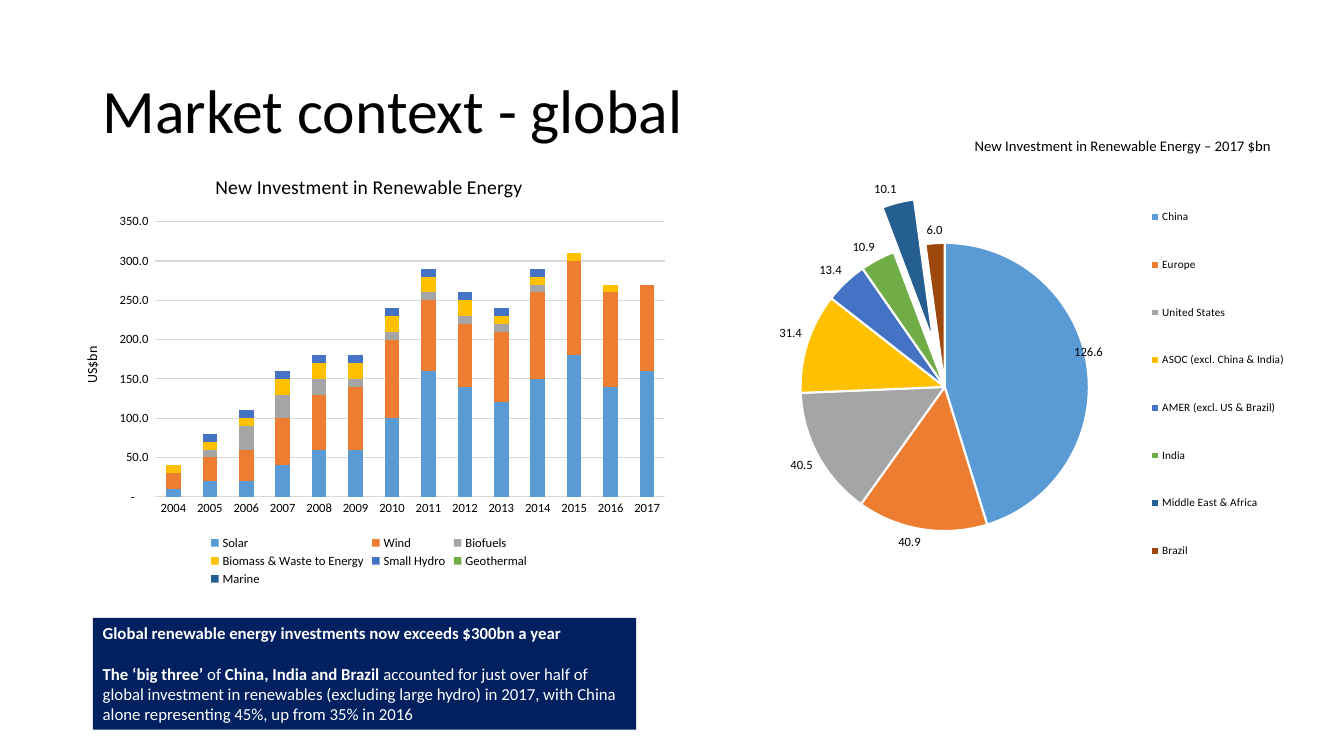
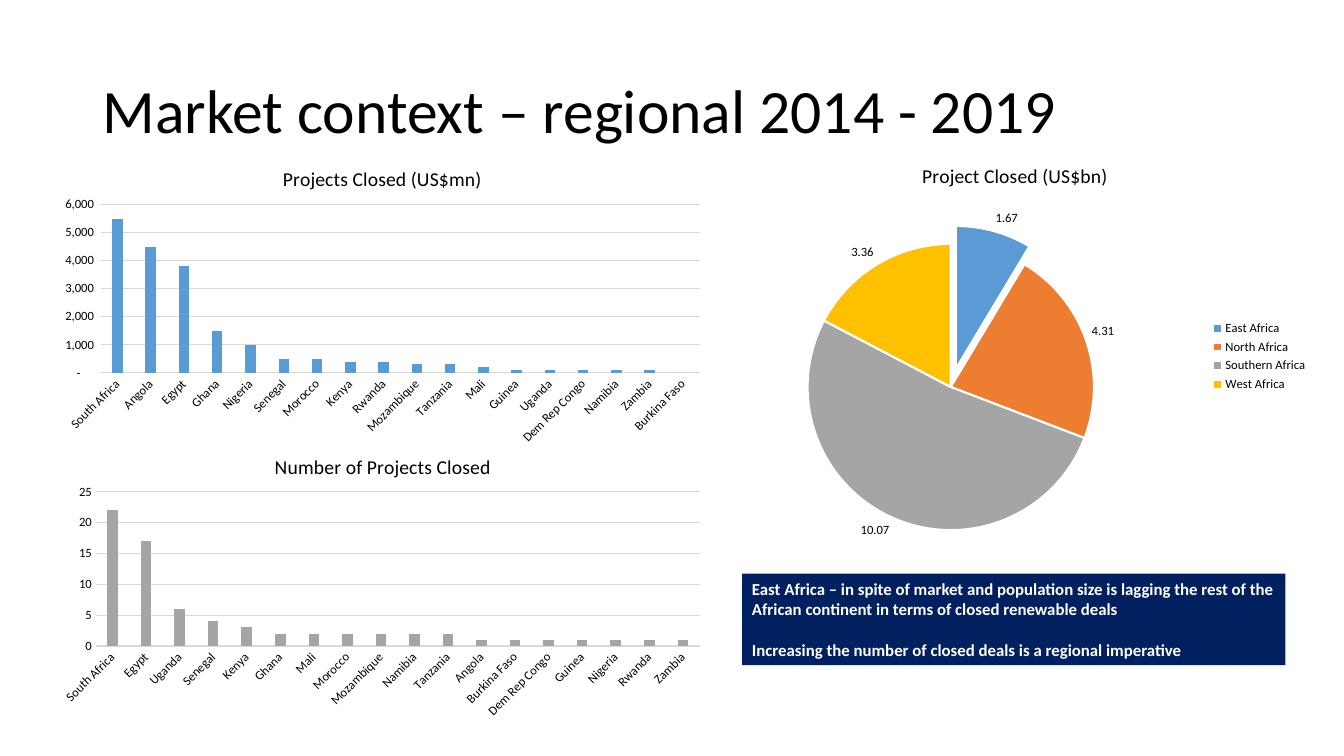
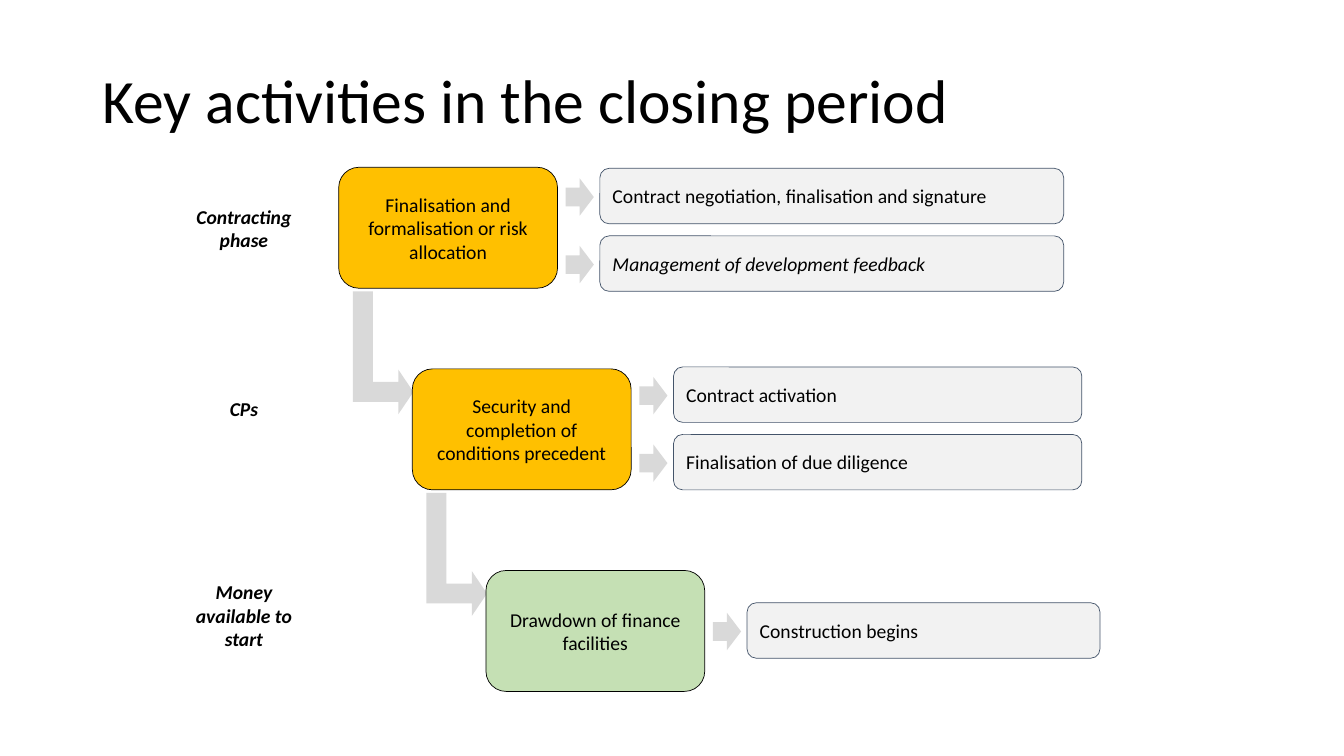
"""Build three slides on renewable energy markets and the closing period."""
from lxml import etree
from pptx import Presentation
from pptx.chart.data import CategoryChartData
from pptx.dml.color import RGBColor
from pptx.enum.chart import XL_CHART_TYPE, XL_LABEL_POSITION, XL_LEGEND_POSITION, XL_TICK_MARK
from pptx.enum.shapes import MSO_SHAPE
from pptx.enum.text import MSO_ANCHOR, PP_ALIGN
from pptx.oxml.ns import qn
from pptx.util import Inches, Pt

STACKED, CLUSTERED, PIE = XL_CHART_TYPE.COLUMN_STACKED, XL_CHART_TYPE.COLUMN_CLUSTERED, XL_CHART_TYPE.PIE
OUTSIDE = XL_LABEL_POSITION.OUTSIDE_END
BOTTOM, RIGHT = XL_LEGEND_POSITION.BOTTOM, XL_LEGEND_POSITION.RIGHT
NO_TICK = XL_TICK_MARK.NONE
RECT, ROUND = MSO_SHAPE.RECTANGLE, MSO_SHAPE.ROUNDED_RECTANGLE
ARROW, BENT = MSO_SHAPE.RIGHT_ARROW, MSO_SHAPE.BENT_UP_ARROW
TOP, MIDDLE = MSO_ANCHOR.TOP, MSO_ANCHOR.MIDDLE
LEFT, CENTER = PP_ALIGN.LEFT, PP_ALIGN.CENTER


class Theme:
    font = "Calibri"
    black, white, navy, slate = "000000", "FFFFFF", "002060", "44546A"
    amber, green, pale, arrow = "FFC000", "C5E0B4", "F2F2F2", "D9D9D9"
    series = ["5B9BD5", "ED7D31", "A5A5A5", "FFC000", "4472C4", "70AD47", "255E91", "9E480E"]
    title, body, callout, chart_title, pie_title = 44, 14, 12, 14, 10.5
    chart, label, legend = 10, 9, 8


YEARS = [str(year) for year in range(2004, 2018)]
INVESTMENT = {
    "Solar": [10, 20, 20, 40, 60, 60, 100, 160, 140, 120, 150, 180, 140, 160],
    "Wind": [20, 30, 40, 60, 70, 80, 100, 90, 80, 90, 110, 120, 120, 110],
    "Biofuels": [0, 10, 30, 30, 20, 10, 10, 10, 10, 10, 10, 0, 0, 0],
    "Biomass & Waste to Energy": [10, 10, 10, 20, 20, 20, 20, 20, 20, 10, 10, 10, 10, 0],
    "Small Hydro": [0, 10, 10, 10, 10, 10, 10, 10, 10, 10, 10, 0, 0, 0],
    "Geothermal": [0] * 14,
    "Marine": [0] * 14,
}
REGIONS_2017 = {
    "China": 126.6, "Europe": 40.9, "United States": 40.5, "ASOC (excl. China & India)": 31.4,
    "AMER (excl. US & Brazil)": 13.4, "India": 10.9, "Middle East & Africa": 10.1, "Brazil": 6,
}
CLOSED_VALUE = {
    "South Africa": 5500, "Angola": 4500, "Egypt": 3800, "Ghana": 1500, "Nigeria": 1000,
    "Senegal": 500, "Morocco": 500, "Kenya": 400, "Rwanda": 400, "Mozambique": 300,
    "Tanzania": 300, "Mali": 200, "Guinea": 100, "Uganda": 100, "Dem Rep Congo": 100,
    "Namibia": 100, "Zambia": 100, "Burkina Faso": 0,
}
CLOSED_COUNT = {
    "South Africa": 22, "Egypt": 17, "Uganda": 6, "Senegal": 4, "Kenya": 3, "Ghana": 2,
    "Mali": 2, "Morocco": 2, "Mozambique": 2, "Namibia": 2, "Tanzania": 2, "Angola": 1,
    "Burkina Faso": 1, "Dem Rep Congo": 1, "Guinea": 1, "Nigeria": 1, "Rwanda": 1, "Zambia": 1,
}
CLOSED_REGION = {"East Africa": 1.67, "North Africa": 4.31, "Southern Africa": 10.07, "West Africa": 3.36}

GLOBAL_NOTE = [
    [("Global renewable energy investments now exceeds $300bn a year", True)],
    [("The ‘big three’", True), (" of ", False), ("China, India and Brazil", True),
     (" accounted for just over half of global investment in renewables (excluding large hydro) "
      "in 2017, with China alone representing 45%, up from 35% in 2016", False)],
]
REGIONAL_NOTE = [
    [("East Africa – in spite of market and population size is lagging the rest of the African "
      "continent in terms of closed renewable deals", True)],
    [("Increasing the number of closed deals is a regional imperative", True)],
]
STAGES = [
    {"phase": "Contracting phase", "phase_top": 1.71, "fill": Theme.amber, "task_top": 1.67,
     "text": "Finalisation and formalisation or risk allocation",
     "tasks": [("Contract negotiation, finalisation and signature", False),
               ("Management of development feedback", True)]},
    {"phase": "CPs", "phase_top": 3.5, "fill": Theme.amber, "task_top": 3.64,
     "text": "Security and completion of conditions precedent",
     "tasks": [("Contract activation", False), ("Finalisation of due diligence", False)]},
    {"phase": "Money available to start", "phase_top": 5.55, "fill": Theme.green, "task_top": 5.98,
     "text": "Drawdown of finance facilities",
     "tasks": [("Construction begins", False)]},
]
ONE_DECIMAL = r'_ * #,##0.0_ ;_ * \-#,##0.0_ ;_ * "-"??_ '
THOUSANDS = r'_ * #,##0_ ;_ * \-#,##0_ ;_ * "-"??_ ;_ @_ '


def rgb(value):
    return RGBColor.from_string(value)


def style_font(font, size, color=Theme.black, bold=False, italic=False):
    font.name, font.size, font.bold, font.italic = Theme.font, Pt(size), bold, italic
    font.color.rgb = rgb(color)


def write(tf, paragraphs, size=Theme.body, color=Theme.black, align=LEFT, anchor=MIDDLE,
          italic=False, gap=0, spacing=1.0):
    """Fill a text frame with paragraphs, each a list of (text, bold) runs."""
    tf.word_wrap, tf.vertical_anchor = True, anchor
    for i, runs in enumerate(paragraphs):
        p = tf.add_paragraph() if i else tf.paragraphs[0]
        p.alignment, p.line_spacing = align, spacing
        if i:
            p.space_before = Pt(gap)
        for text, bold in runs:
            r = p.add_run()
            r.text = text
            style_font(r.font, size, color, bold, italic)


def add_block(s, kind, box, fill=None, line=None):
    sp = s.shapes.add_shape(kind, *map(Inches, box))
    sp.shadow.inherit = False
    if fill:
        sp.fill.solid()
        sp.fill.fore_color.rgb = rgb(fill)
    else:
        sp.fill.background()
    if line:
        sp.line.color.rgb, sp.line.width = rgb(line), Pt(0.5)
    else:
        sp.line.fill.background()
    return sp


def add_slide(prs, title, top=0.4):
    s = prs.slides.add_slide(prs.slide_layouts[6])
    tf = s.shapes.add_textbox(*map(Inches, (0.92, top, 11.5, 1.45))).text_frame
    write(tf, [[(title, False)]], size=Theme.title, spacing=0.9)
    return s


def add_callout(s, paragraphs, box):
    sp = add_block(s, RECT, box, Theme.navy)
    write(sp.text_frame, paragraphs, size=Theme.callout, color=Theme.white, anchor=TOP, gap=14.6)


def set_layout(element, index, **values):
    """Give a chart part a manual layout, as fractions of the chart."""
    old = element.find(qn("c:layout"))
    if old is not None:
        element.remove(old)
    layout = etree.Element(qn("c:layout"))
    manual = etree.SubElement(layout, qn("c:manualLayout"))
    for name, value in values.items():
        etree.SubElement(manual, qn("c:" + name)).set("val", str(value))
    element.insert(index, layout)


def place(element, index, frame, box, **modes):
    """Put a chart part at a box given in slide inches."""
    left, top, width, height = frame
    values = [(box[0] - left) / width, (box[1] - top) / height]
    values += [size / full for size, full in zip(box[2:], (width, height))]
    fractions = {name: round(value, 4) for name, value in zip("xywh", values)}
    set_layout(element, index, **modes, xMode="edge", yMode="edge", **fractions)


def add_chart(s, kind, frame, cats, series, title, title_at, plot, number_format="General",
              title_size=Theme.chart_title, legend=None, legend_size=Theme.label, legend_box=None):
    data = CategoryChartData(number_format=number_format)
    data.categories = cats
    for name, values in series.items():
        data.add_series(name, values)
    chart = s.shapes.add_chart(kind, *map(Inches, frame), data).chart
    style_font(chart.font, Theme.chart)
    chart.has_title = True
    tf = chart.chart_title.text_frame
    write(tf, [[(title, False)]], size=title_size, align=CENTER)
    chart.chart_title.include_in_layout = False
    place(chart.chart_title._element, 1, frame, title_at)
    place(chart._chartSpace.chart.plotArea, 0, frame, plot, layoutTarget="inner")
    chart.has_legend = legend is not None
    if chart.has_legend:
        chart.legend.position, chart.legend.include_in_layout = legend, False
        style_font(chart.legend.font, legend_size)
        if legend_box:
            place(chart.legend._element, 1, frame, legend_box)
    return chart


def format_columns(chart, colors, top, step, number_format, gap, overlap, auto_rotate=False):
    plot = chart.plots[0]
    plot.vary_by_categories, plot.gap_width, plot.overlap = False, gap, overlap
    for series, color in zip(plot.series, colors):
        series.format.fill.solid()
        series.format.fill.fore_color.rgb = rgb(color)
    cat, val = chart.category_axis, chart.value_axis
    for axis in (cat, val):
        axis.major_tick_mark = axis.minor_tick_mark = NO_TICK
        style_font(axis.tick_labels.font, Theme.label)
    for line in (cat.format.line, val.major_gridlines.format.line):
        line.color.rgb, line.width = rgb(Theme.arrow), Pt(0.75)
    val.format.line.fill.background()
    val.minimum_scale, val.maximum_scale, val.major_unit = 0, top, step
    val.tick_labels.number_format = number_format
    val.tick_labels.number_format_is_linked = False
    if auto_rotate:
        cat._element.find(qn("c:txPr")).find(qn("a:bodyPr")).set("rot", "-60000000")


def format_pie(chart, number_format, exploded, explosion):
    plot = chart.plots[0]
    plot.vary_by_categories = True
    series = plot.series[0]
    for i in range(len(plot.categories)):
        fmt = series.points[i].format
        fmt.fill.solid()
        fmt.fill.fore_color.rgb = rgb(Theme.series[i])
        fmt.line.color.rgb, fmt.line.width = rgb(Theme.white), Pt(1.5)
    slice_xml = series._element.findall(qn("c:dPt"))[exploded]
    offset = etree.Element(qn("c:explosion"))
    offset.set("val", str(explosion))
    slice_xml.find(qn("c:spPr")).addprevious(offset)
    labels = series.data_labels
    labels.show_value, labels.position = True, OUTSIDE
    labels.number_format, labels.number_format_is_linked = number_format, False
    style_font(labels.font, Theme.label)
    labels_xml = series._element.find(qn("c:dLbls"))
    leader = labels_xml.find(qn("c:showLeaderLines"))
    if leader is None:
        leader = etree.SubElement(labels_xml, qn("c:showLeaderLines"))
    leader.set("val", "0")
    return series


def build_global(prs):
    s = add_slide(prs, "Market context - global")
    chart = add_chart(s, STACKED, (0.62, 1.55, 6.1, 4.32), YEARS, INVESTMENT,
                      "New Investment in Renewable Energy", (2.1, 1.68), (1.54, 2.2, 5.06, 2.73),
                      legend=BOTTOM, legend_box=(2.05, 5.28, 3.22, 0.57))
    format_columns(chart, Theme.series, 350, 50, ONE_DECIMAL, 150, 100)
    write(chart.value_axis.axis_title.text_frame, [[("US$bn", False)]], size=Theme.chart)

    chart = add_chart(s, PIE, (7.01, 1.21, 6.26, 4.66), REGIONS_2017,
                      {"Investment": REGIONS_2017.values()},
                      "New Investment in Renewable Energy – 2017 $bn", (9.64, 1.32),
                      (7.94, 2.41, 2.86, 2.86), "0.0", Theme.pie_title,
                      RIGHT, Theme.legend, (11.18, 1.75, 1.8, 4.13))
    china = format_pie(chart, "0.0", 6, 32).points[0].data_label
    china.position = OUTSIDE
    style_font(china.font, Theme.label)
    label_xml = chart._chartSpace.find(".//" + qn("c:dLbl"))
    set_layout(label_xml, 1, x=-0.03, y=-0.01)
    add_callout(s, GLOBAL_NOTE, (0.92, 6.13, 5.39, 1.11))


def build_regional(prs):
    s = add_slide(prs, "Market context – regional 2014 - 2019")
    bars = [
        ("Projects Closed (US$mn)", CLOSED_VALUE, (0.49, 1.44, 6.58, 3.03), (2.77, 1.6),
         (1.0, 2.03, 5.94, 1.67), Theme.series[0], 6000, 1000, THOUSANDS),
        ("Number of Projects Closed", CLOSED_COUNT, (0.49, 4.28, 6.58, 2.9), (2.69, 4.46),
         (0.95, 4.88, 5.99, 1.53), Theme.series[2], 25, 5, "General"),
    ]
    for title, values, frame, title_at, plot, color, top, step, number_format in bars:
        chart = add_chart(s, CLUSTERED, frame, values, {title: values.values()}, title, title_at, plot)
        format_columns(chart, [color], top, step, number_format, 219, -27, auto_rotate=True)

    chart = add_chart(s, PIE, (7.07, 1.44, 6, 4.19), CLOSED_REGION,
                      {"Closed": CLOSED_REGION.values()}, "Project Closed (US$bn)", (9.11, 1.57),
                      (8.01, 2.42, 2.84, 2.84), "0.00", legend=RIGHT)
    format_pie(chart, "0.00", 0, 13)
    add_callout(s, REGIONAL_NOTE, (7.36, 5.69, 5.39, 0.91))


def build_activities(prs):
    s = add_slide(prs, "Key activities in the closing period", top=0.3)
    for i, stage in enumerate(STAGES):
        left, top = 3.36 + 0.73 * i, 1.66 + 2 * i
        sp = add_block(s, ROUND, (1.68, stage["phase_top"], 1.48, 1.11))
        write(sp.text_frame, [[(stage["phase"], True)]], italic=True, align=CENTER)
        sp = add_block(s, ROUND, (left, top, 2.17, 1.2), stage["fill"], Theme.black)
        write(sp.text_frame, [[(stage["text"], False)]], align=CENTER)
        for j, (task, italic) in enumerate(stage["tasks"]):
            task_left, task_top = left + 2.59, stage["task_top"] + 0.67 * j
            add_block(s, ARROW, (task_left - 0.34, task_top + 0.1, 0.28, 0.37), Theme.arrow)
            sp = add_block(s, ROUND, (task_left, task_top, 4.6 - 0.55 * i, 0.55), Theme.pale, Theme.slate)
            write(sp.text_frame, [[(task, False)]], italic=italic)
        if i < len(STAGES) - 1:
            sp = add_block(s, BENT, (left - 0.17, top + 1.54, 1.22, 0.6), Theme.arrow)
            sp.rotation = 90
            for k, value in enumerate((0.33, 0.37, 0.25)):
                sp.adjustments[k] = value


def main():
    prs = Presentation()
    prs.slide_width, prs.slide_height = Inches(13.33), Inches(7.5)
    build_global(prs)
    build_regional(prs)
    build_activities(prs)
    prs.save("out.pptx")


if __name__ == "__main__":
    main()
